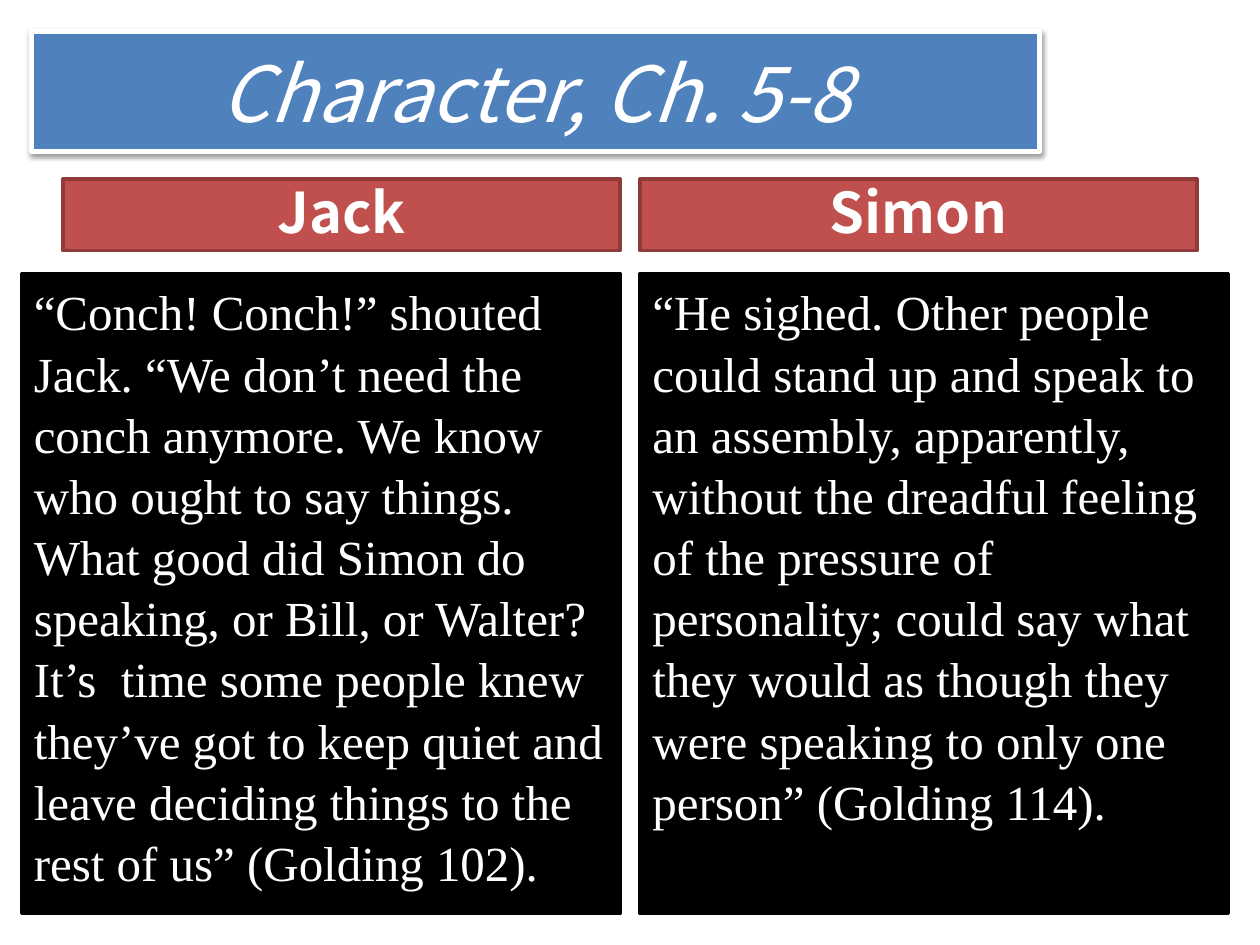
import pptx
import pptx.util
import pptx.dml.color
import pptx.enum.shapes
import pptx.enum.text
import lxml.etree
import pptx.oxml.ns

Inches = pptx.util.Inches
Pt = pptx.util.Pt
ALIGN = pptx.enum.text.PP_ALIGN
ANCHOR = pptx.enum.text.MSO_ANCHOR

COLORS = {
    "title": "4F81BD",
    "heading": "C0504D",
    "heading_line": "8E3B39",
    "quote": "000000",
    "white": "FFFFFF",
    "shadow": "000000",
}
SANS = "Noto Sans CJK JP"
SERIF = "Times New Roman"

# Heading, heading box, quotation, quotation box (left, top, width, height)
COLUMNS = [
    ("Jack", (0.5, 1.42, 4.42, 0.57),
     "“Conch! Conch!” shouted Jack. “We don’t need the conch anymore. We know "
     "who ought to say things. What good did Simon do speaking, or Bill, or "
     "Walter? It’s  time some people knew they’ve got to keep quiet and leave "
     "deciding things to the rest of us” (Golding 102).",
     (0.17, 2.17, 4.75, 5.08)),
    ("Simon", (5.08, 1.42, 4.42, 0.57),
     "“He sighed. Other people could stand up and speak to an assembly, "
     "apparently, without the dreadful feeling of the pressure of personality; "
     "could say what they would as though they were speaking to only one "
     "person” (Golding 114).",
     (5.08, 2.17, 4.67, 5.08)),
]


def color(name):
    return pptx.dml.color.RGBColor.from_string(COLORS[name])


def style_box(shape, fill, line, width):
    shape.fill.solid()
    shape.fill.fore_color.rgb = color(fill)
    shape.line.color.rgb = color(line)
    shape.line.width = Pt(width)


def write_text(shape, text, font_name, size, align, anchor):
    frame = shape.text_frame
    frame.word_wrap = True
    frame.auto_size = pptx.enum.text.MSO_AUTO_SIZE.NONE
    frame.vertical_anchor = anchor
    paragraph = frame.paragraphs[0]
    paragraph.text = text
    paragraph.alignment = align
    paragraph.font.name = font_name
    paragraph.font.size = Pt(size)
    paragraph.font.color.rgb = color("white")
    return paragraph


def add_box(slide, box, fill, line):
    shape = slide.shapes.add_shape(
        pptx.enum.shapes.MSO_SHAPE.RECTANGLE, *map(Inches, box))
    shape.shadow.inherit = False
    style_box(shape, fill, line, 2)
    return shape


def add_soft_shadow(shape):
    qn = pptx.oxml.ns.qn
    effects = lxml.etree.SubElement(shape._element.spPr, qn("a:effectLst"))
    shadow = lxml.etree.SubElement(
        effects, qn("a:outerShdw"), blurRad=str(Pt(3.1)), dist=str(Pt(1.6)),
        dir="5400000", rotWithShape="0")
    tint = lxml.etree.SubElement(
        shadow, qn("a:srgbClr"), val=COLORS["shadow"])
    lxml.etree.SubElement(tint, qn("a:alpha"), val="38000")


def place_title(slide, box, text):
    title = slide.shapes.title
    title.left, title.top, title.width, title.height = map(Inches, box)
    style_box(title, "title", "white", 3)
    add_soft_shadow(title)
    paragraph = write_text(title, text, SANS, 44, ALIGN.CENTER, ANCHOR.MIDDLE)
    paragraph.font.italic = True


def add_heading(slide, box, text):
    shape = add_box(slide, box, "heading", "heading_line")
    paragraph = write_text(shape, text, SANS, 32, ALIGN.CENTER, ANCHOR.BOTTOM)
    paragraph.font.bold = True


def add_quote(slide, box, text):
    shape = add_box(slide, box, "quote", "quote")
    paragraph = write_text(shape, text, SERIF, 28, ALIGN.LEFT, ANCHOR.TOP)
    paragraph.line_spacing = 1.04


def main():
    presentation = pptx.Presentation()
    presentation.slide_width = Inches(10)
    presentation.slide_height = Inches(7.5)
    slide = presentation.slides.add_slide(presentation.slide_layouts[5])

    # Title banner
    place_title(slide, (0.25, 0.25, 8, 0.95), "Character, Ch. 5-8")

    # One heading and one quotation per character
    for heading, heading_box, quote, quote_box in COLUMNS:
        add_heading(slide, heading_box, heading)
        add_quote(slide, quote_box, quote)

    presentation.save("out.pptx")


if __name__ == "__main__":
    main()
